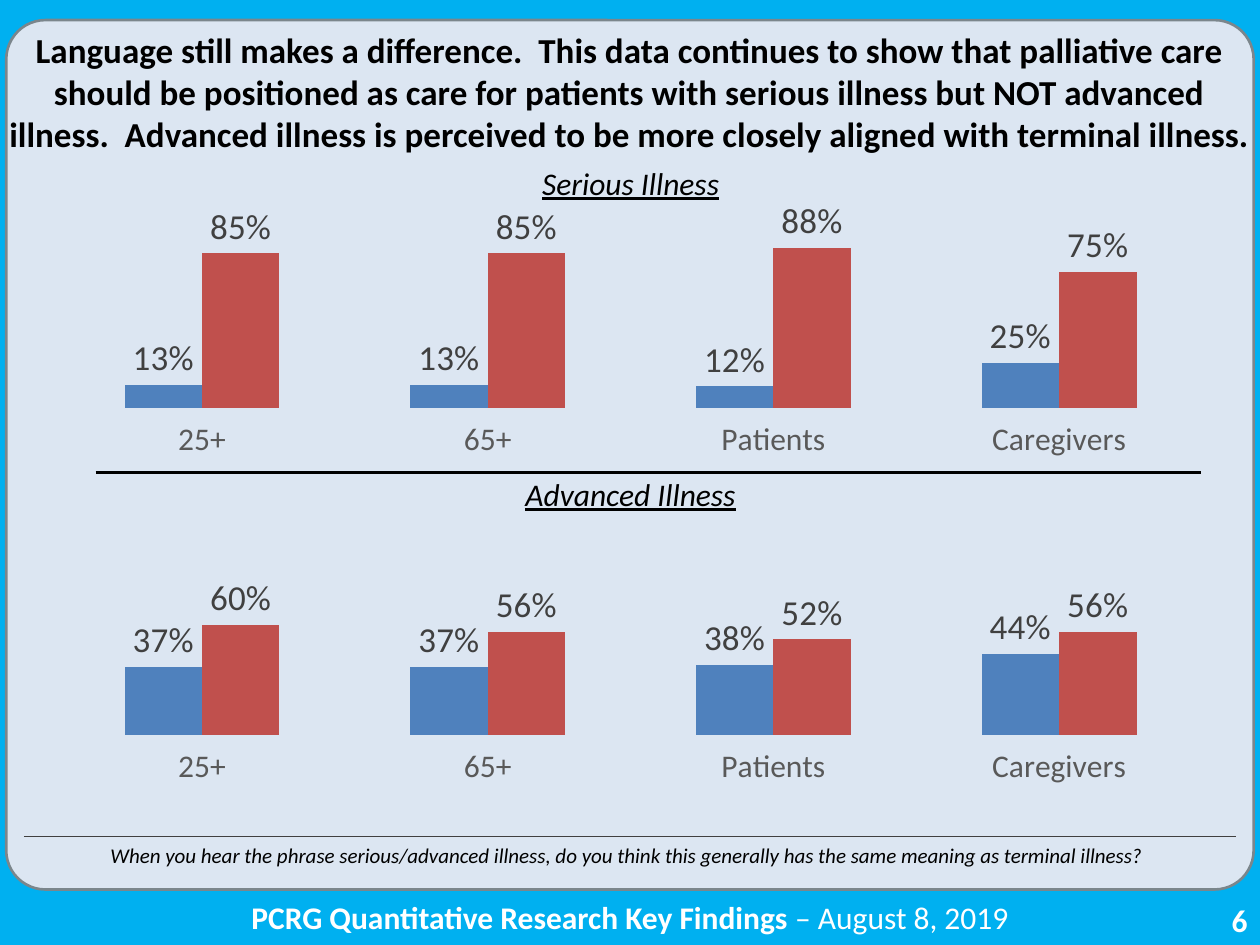
from dataclasses import dataclass

from lxml import etree
from pptx import Presentation
from pptx.chart.data import CategoryChartData
from pptx.dml.color import RGBColor
from pptx.enum.chart import XL_CHART_TYPE as ChartType
from pptx.enum.chart import XL_LABEL_POSITION as LabelPosition
from pptx.enum.chart import XL_TICK_LABEL_POSITION as TickLabels
from pptx.enum.chart import XL_TICK_MARK as TickMark
from pptx.enum.shapes import MSO_CONNECTOR as Connector
from pptx.enum.shapes import MSO_SHAPE as Shape
from pptx.enum.text import MSO_ANCHOR as Anchor
from pptx.enum.text import PP_ALIGN as Align
from pptx.oxml import parse_xml
from pptx.oxml.ns import nsdecls, qn
from pptx.util import Inches, Pt

FONT = "Calibri"
GROUPS = ("25+", "65+", "Patients", "Caregivers")
SERIES_COLORS = ("4F81BD", "C0504D")


@dataclass
class Span:
    text: str
    size: float = 18
    color: str = "000000"
    bold: bool = False
    italic: bool = False
    underline: bool = False


@dataclass
class Label:
    left: float
    top: float
    width: float
    height: float
    spans: tuple[Span, ...]
    align: Align = Align.CENTER
    tight: bool = False


@dataclass
class Rule:
    left: float
    right: float
    y: float
    color: str
    weight: float


@dataclass
class Panel:
    top: float
    plot_top: float
    plot_height: float
    series: dict[str, tuple[float, ...]]


PANELS = (
    Panel(1.56, 0.098, 0.606, {"Series 1": (0.13, 0.13, 0.12, 0.25),
                               "Series 2": (0.85, 0.85, 0.88, 0.75)}),
    Panel(4.15, 0.093, 0.612, {"Yes": (0.37, 0.37, 0.38, 0.44),
                               "No": (0.6, 0.56, 0.52, 0.56)}),
)

FOOTER = (
    Label(7.75, 7.1, 2.25, 0.4, (Span("6", color="FFFFFF", bold=True),), Align.RIGHT),
    Label(0.79, 7.08, 8.42, 0.4, (
        Span("PCRG Quantitative Research Key Findings ", color="FFFFFF", bold=True),
        Span("– August 8, 2019", color="FFFFFF"))),
)

LABELS = (
    Label(0.07, 0.25, 9.85, 0.96, (Span(
        "Language still makes a difference.  This data continues to show that "
        "palliative care should be positioned as care for patients with serious "
        "illness but NOT advanced illness.  Advanced illness is perceived to be "
        "more closely aligned with terminal illness.", 20, bold=True),), tight=True),
    Label(0.07, 6.64, 9.85, 0.3, (Span(
        "When you hear the phrase serious/advanced illness, do you think this "
        "generally has the same meaning as terminal illness? ", 12, italic=True),)),
    Label(2.9, 1.25, 4.21, 0.4, (Span("Serious Illness", italic=True, underline=True),)),
    Label(2.9, 3.72, 4.21, 0.4, (Span("Advanced Illness", italic=True, underline=True),)),
)

RULES = (
    Rule(0.76, 9.53, 3.75, "000000", 1.5),
    Rule(0.19, 9.81, 6.64, "404040", 0.75),
)


def rgb(value: str) -> RGBColor:
    return RGBColor.from_string(value)


def style_font(font, size: float, color: str) -> None:
    font.name = FONT
    font.size = Pt(size)
    font.color.rgb = rgb(color)


def add_label(page, label: Label) -> None:
    box = page.shapes.add_textbox(Inches(label.left), Inches(label.top),
                                  Inches(label.width), Inches(label.height))
    frame = box.text_frame
    frame.word_wrap = True
    if label.tight:
        frame.vertical_anchor = Anchor.MIDDLE
        frame.margin_left = frame.margin_right = 0
        frame.margin_top = frame.margin_bottom = 0
    para = frame.paragraphs[0]
    para.alignment = label.align
    for span in label.spans:
        run = para.add_run()
        run.text = span.text
        style_font(run.font, span.size, span.color)
        run.font.bold = span.bold
        run.font.italic = span.italic
        run.font.underline = span.underline


def add_rule(page, rule: Rule) -> None:
    line = page.shapes.add_connector(Connector.STRAIGHT, Inches(rule.left), Inches(rule.y),
                                     Inches(rule.right), Inches(rule.y))
    line.line.color.rgb = rgb(rule.color)
    line.line.width = Pt(rule.weight)
    etree.SubElement(line._element.spPr, qn("a:effectLst"))


def place_plot(chart, top: float, height: float) -> None:
    """Fix the inner plot area at full width."""
    plot_area = chart._chartSpace.chart.plotArea
    for layout in plot_area.findall(qn("c:layout")):
        plot_area.remove(layout)
    plot_area.insert(0, parse_xml(
        f'<c:layout {nsdecls("c")}><c:manualLayout><c:layoutTarget val="inner"/>'
        '<c:xMode val="edge"/><c:yMode val="edge"/><c:x val="0"/>'
        f'<c:y val="{top}"/><c:w val="1"/><c:h val="{height}"/>'
        '</c:manualLayout></c:layout>'))


def add_panel(page, panel: Panel) -> None:
    data = CategoryChartData(number_format="0%")
    data.categories = GROUPS
    for name, values in panel.series.items():
        data.add_series(name, values)
    chart = page.shapes.add_chart(ChartType.COLUMN_CLUSTERED, Inches(0.47), Inches(panel.top),
                                  Inches(9.07), Inches(2.39), data).chart
    style_font(chart.font, 10, "000000")
    chart.has_title = False
    chart.has_legend = False

    # Axes
    values_axis = chart.value_axis
    values_axis.minimum_scale, values_axis.maximum_scale = 0, 1
    values_axis.has_major_gridlines = False
    values_axis.visible = False
    groups_axis = chart.category_axis
    groups_axis.major_tick_mark = TickMark.NONE
    groups_axis.tick_label_position = TickLabels.LOW
    groups_axis.format.line.fill.background()
    style_font(groups_axis.tick_labels.font, 18, "595959")

    # Columns and their labels
    plot = chart.plots[0]
    plot.vary_by_categories = False
    plot.gap_width = 169
    plot.overlap = 0
    for series, color in zip(plot.series, SERIES_COLORS):
        series.format.fill.solid()
        series.format.fill.fore_color.rgb = rgb(color)
        labels = series.data_labels
        labels.show_value = True
        labels.position = LabelPosition.OUTSIDE_END
        labels.number_format = "0%"
        labels.number_format_is_linked = False
        style_font(labels.font, 20, "404040")
    place_plot(chart, panel.plot_top, panel.plot_height)


def add_card(page) -> None:
    card = page.shapes.add_shape(Shape.ROUNDED_RECTANGLE, Inches(0.05), Inches(0.16),
                                 Inches(9.9), Inches(6.9))
    card.adjustments[0] = 0.045
    card.shadow.inherit = False
    card.fill.solid()
    card.fill.fore_color.rgb = rgb("DCE6F2")
    card.line.color.rgb = rgb("7B868C")
    card.line.width = Pt(1.5)


def main() -> None:
    deck = Presentation()
    deck.slide_width, deck.slide_height = Inches(10), Inches(7.5)
    page = deck.slides.add_slide(deck.slide_layouts[6])
    page.background.fill.solid()
    page.background.fill.fore_color.rgb = rgb("00B0F0")

    add_card(page)
    for panel in PANELS:
        add_panel(page, panel)
    for rule in RULES:
        add_rule(page, rule)
    for label in FOOTER + LABELS:
        add_label(page, label)
    deck.save("out.pptx")


if __name__ == "__main__":
    main()
